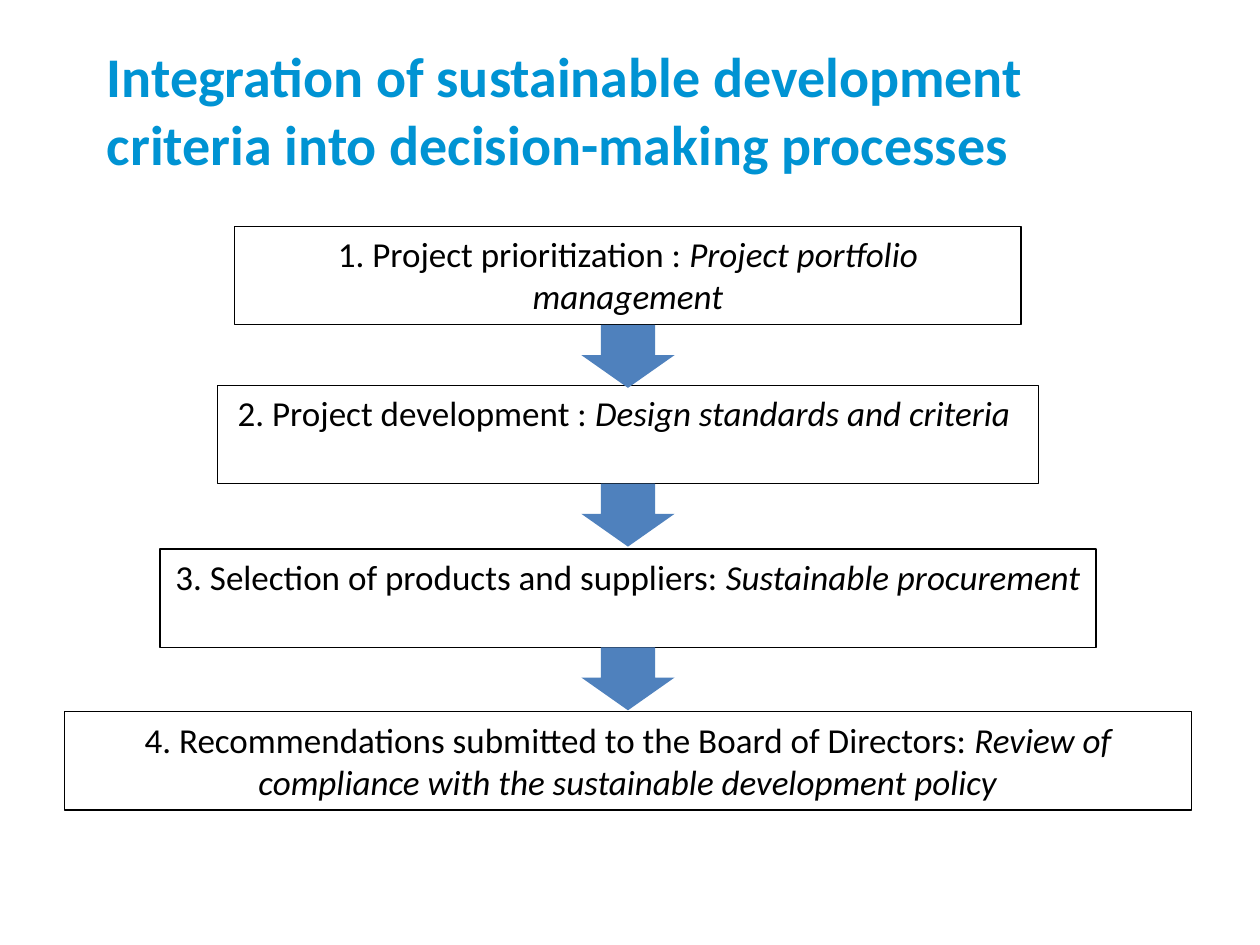
from pptx import Presentation
from pptx.dml.color import RGBColor
from pptx.enum import shapes, text
from pptx.util import Cm, Pt

TITLE = "Integration of sustainable development criteria into decision-making processes"
# step, means, top (cm), width (cm)
STEPS = [
    ("1. Project prioritization : ", "Project portfolio management", 4.57, 15.85),
    ("2. Project development : ", "Design standards and criteria ", 7.77, 16.56),
    ("3. Selection of products and suppliers: ", "Sustainable procurement", 11.07, 18.87),
    ("4. Recommendations submitted to the Board of Directors: ",
     "Review of compliance with the sustainable development policy", 14.35, 22.73),
]
COLORS = {"title": "0093D3", "ink": "000000", "arrow": "4F81BD"}
CENTER = 12.66
STEP_HEIGHT = 1.98
ARROW_WIDTH, ARROW_HEIGHT = 1.88, 1.27


def color(name):
    return RGBColor.from_string(COLORS[name])


def add_run(paragraph, words, ink, **formats):
    run = paragraph.add_run()
    run.text = words
    run.font.color.rgb = color(ink)
    for key, value in {"name": "Calibri", **formats}.items():
        setattr(run.font, key, value)


def add_centered(slide, kind, top, width, height):
    """Add a shadowless shape on the common vertical axis of the flow."""
    shape = slide.shapes.add_shape(
        kind, Cm(CENTER - width / 2), Cm(top), Cm(width), Cm(height))
    shape.shadow.inherit = False
    return shape


def add_title(slide):
    title = slide.shapes.title
    place = {"left": 1.9, "top": 0.79, "width": 22.12, "height": 2.82}
    for key, value in place.items():
        setattr(title, key, Cm(value))
    frame = title.text_frame
    frame.word_wrap = True
    frame.auto_size = text.MSO_AUTO_SIZE.NONE
    frame.vertical_anchor = text.MSO_ANCHOR.MIDDLE
    paragraph = frame.paragraphs[0]
    paragraph.alignment = text.PP_ALIGN.LEFT
    add_run(paragraph, TITLE, "title", size=Pt(32), bold=True)


def add_step(slide, step, means, top, width):
    box = add_centered(slide, shapes.MSO_SHAPE.RECTANGLE, top, width, STEP_HEIGHT)
    box.fill.background()
    box.line.color.rgb = color("ink")
    box.line.width = Pt(0.75)
    frame = box.text_frame
    frame.word_wrap = True
    frame.vertical_anchor = text.MSO_ANCHOR.TOP
    paragraph = frame.paragraphs[0]
    paragraph.alignment = text.PP_ALIGN.CENTER
    add_run(paragraph, step, "ink", size=Pt(20))
    add_run(paragraph, means, "ink", size=Pt(20), italic=True)


def add_arrow(slide, top):
    arrow = add_centered(slide, shapes.MSO_SHAPE.DOWN_ARROW, top, ARROW_WIDTH, ARROW_HEIGHT)
    arrow.adjustments[0] = 0.58
    arrow.adjustments[1] = 0.52
    arrow.fill.solid()
    arrow.fill.fore_color.rgb = color("arrow")
    arrow.line.fill.background()


def main():
    deck = Presentation()
    deck.slide_width, deck.slide_height = Cm(25.4), Cm(19.05)
    slide = deck.slides.add_slide(deck.slide_layouts[5])
    add_title(slide)
    for step in STEPS:
        add_step(slide, *step)
    for _, _, top, _ in STEPS[:-1]:
        add_arrow(slide, top + STEP_HEIGHT)
    deck.save("out.pptx")


if __name__ == "__main__":
    main()
